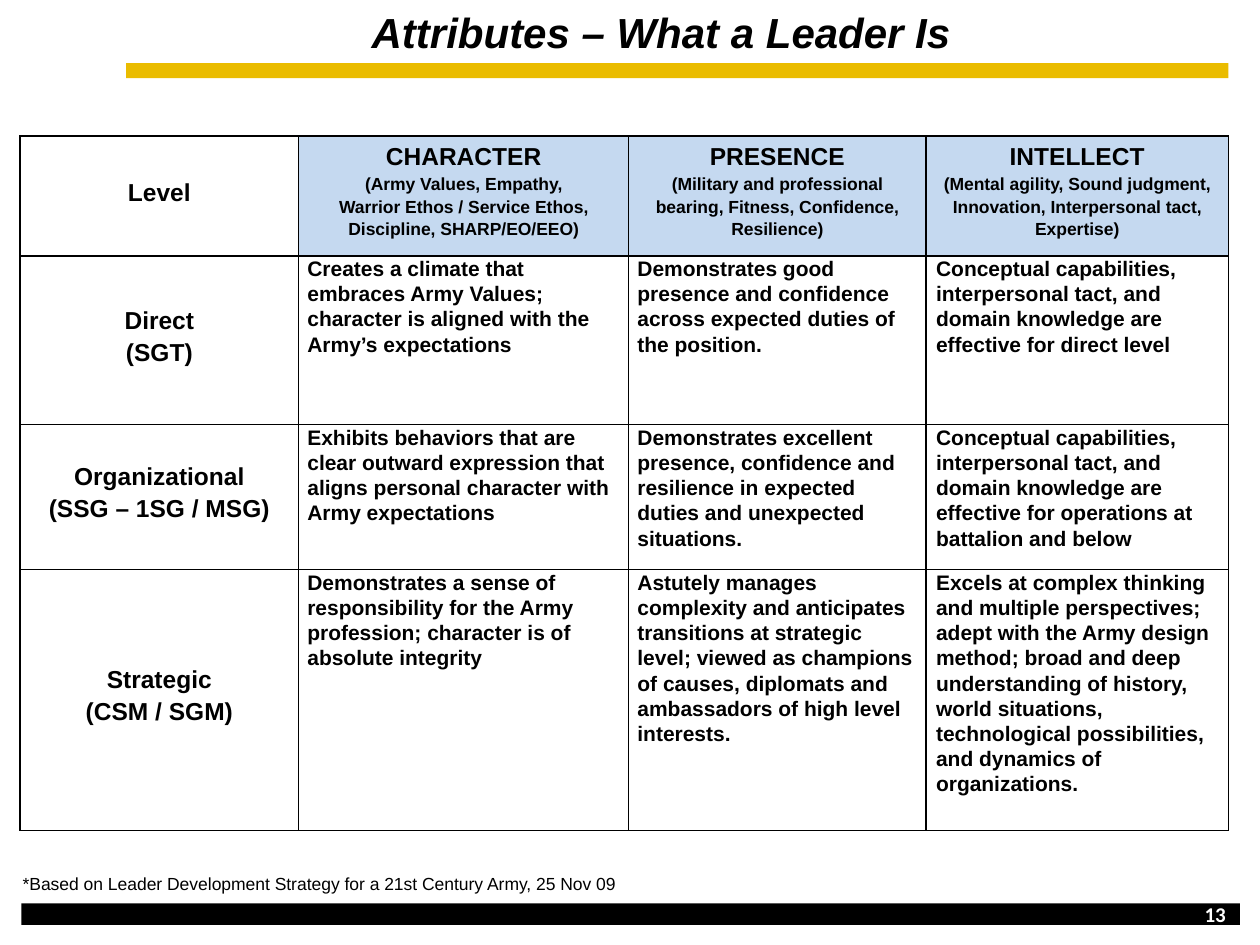
"""Build the leader attributes slide: title, level-by-attribute table and footer."""
from lxml.etree import SubElement
from pptx import Presentation
from pptx.dml.color import RGBColor as RGB
from pptx.enum.shapes import MSO_SHAPE as SHAPE
from pptx.enum.text import PP_ALIGN as ALIGN
from pptx.oxml.ns import qn
from pptx.util import Inches, Pt

COLORS = {"gold": "EABC00", "black": "000000", "white": "FFFFFF", "header": "C5D9F0"}


def add_lines(tf, lines, color="black", spacing=None, **font):
    tf.word_wrap = True
    for i, (text, size, before) in enumerate(lines):
        p = tf.paragraphs[0] if i == 0 else tf.add_paragraph()
        p.space_before = Pt(before)
        r = p.add_run()
        r.text = text
        for name, value in {"name": "Arial", "size": Pt(size), **font}.items():
            setattr(r.font, name, value)
        r.font.color.rgb = RGB.from_string(COLORS[color])
        if spacing:
            p.line_spacing = spacing


def set_margins(target, left=0, top=0, right=0, bottom=0):
    for side, value in zip(("left", "top", "right", "bottom"), (left, top, right, bottom)):
        setattr(target, f"margin_{side}", Inches(value))


prs = Presentation()
prs.slide_width, prs.slide_height = Inches(10), Inches(7.5)
s = prs.slides.add_slide(prs.slide_layouts[6])

bars = [("gold", 1, 0.5, 8.75, 0.12), ("black", 0.17, 7.17, 9.67, 0.17)]
for color, *box in bars:
    sp = s.shapes.add_shape(SHAPE.RECTANGLE, *map(Inches, box))
    sp.shadow.inherit = False
    sp.fill.solid()
    sp.fill.fore_color.rgb = RGB.from_string(COLORS[color])
    sp.line.fill.background()

widths = [2.21, 2.62, 2.36, 2.4]
heights = [0.95, 1.34, 1.15, 2.07]
headers = [
    ("CHARACTER", "(Army Values, Empathy, Warrior Ethos / Service Ethos, Discipline, SHARP/EO/EEO)", 0.3),
    ("PRESENCE", "(Military and professional bearing, Fitness, Confidence, Resilience)", 0.18),
    ("INTELLECT", "(Mental agility, Sound judgment, Innovation, Interpersonal tact, Expertise)", 0.1),
]
levels = [
    (["Level"], 0.34),
    (["Direct", "(SGT)"], 0.41),
    (["Organizational", "(SSG – 1SG / MSG)"], 0.31),
    (["Strategic", "(CSM / SGM)"], 0.77),
]
details = [
    [
        ["Creates a climate that embraces Army Values;",
         "character is aligned with the Army’s expectations"],
        ["Demonstrates good presence and confidence",
         "across expected duties of the position."],
        ["Conceptual capabilities, interpersonal tact, and",
         "domain knowledge are effective for direct level"],
    ],
    [
        ["Exhibits behaviors that are clear outward expression that "
         "aligns personal character with Army expectations"],
        ["Demonstrates excellent presence, confidence and "
         "resilience in expected duties and unexpected",
         "situations."],
        ["Conceptual capabilities, interpersonal tact, and "
         "domain knowledge are effective for operations at",
         "battalion and below"],
    ],
    [
        ["Demonstrates a sense of responsibility for the Army "
         "profession; character is of absolute integrity"],
        ["Astutely manages complexity and anticipates transitions at strategic "
         "level; viewed as champions of causes, diplomats and",
         "ambassadors of high level interests."],
        ["Excels at complex thinking and multiple perspectives; adept with the Army design "
         "method; broad and deep understanding of history,",
         "world situations, technological possibilities, and dynamics of organizations."],
    ],
]

table = s.shapes.add_table(4, 4, Inches(0.16), Inches(1.08),
                           Inches(sum(widths)), Inches(sum(heights))).table
table.first_row = table.horz_banding = False
for col, width in zip(table.columns, widths):
    col.width = Inches(width)
for row, height in zip(table.rows, heights):
    row.height = Inches(height)

for i in range(4):
    for j in range(4):
        cell = table.cell(i, j)
        tcPr = cell._tc.get_or_add_tcPr()
        for edge in ("a:lnL", "a:lnR", "a:lnT", "a:lnB"):
            ln = SubElement(tcPr, qn(edge), w=str(Pt(1)))
            fill = SubElement(ln, qn("a:solidFill"))
            SubElement(fill, qn("a:srgbClr"), val=COLORS["black"])
        tf = cell.text_frame
        if i == 0 and j > 0:
            heading, note, side = headers[j - 1]
            cell.fill.solid()
            cell.fill.fore_color.rgb = RGB.from_string(COLORS["header"])
            set_margins(cell, side, 0.06, side)
            add_lines(tf, [(heading, 14, 0), (note, 10, 0.6)], bold=True)
            tf.paragraphs[1].line_spacing = 1.15
        else:
            cell.fill.background()
            if j == 0:
                lines, top = levels[i]
                set_margins(cell, top=top)
                add_lines(tf, [(t, 14, 2.5 * k) for k, t in enumerate(lines)], bold=True)
            else:
                set_margins(cell, 0.08 if j == 3 else 0.07, 0, 0.1)
                add_lines(tf, [(t, 12, 0) for t in details[i - 1][j - 1]],
                          spacing=Pt(14.4), bold=True)
        for p in tf.paragraphs:
            p.alignment = ALIGN.CENTER if i == 0 or j == 0 else ALIGN.LEFT

captions = [
    ("Attributes – What a Leader Is", 24, (2.95, 0.05, 6.3, 0.47), {"bold": True, "italic": True}),
    ("*Based on Leader Development Strategy for a 21st Century Army, 25 Nov 09", 10,
     (0.18, 6.93, 5, 0.18), {}),
    ("13", 12, (9.56, 7.18, 0.25, 0.19),
     {"bold": True, "name": "Calibri", "color": "white", "spacing": Pt(12.4)}),
]
for text, size, box, style in captions:
    tf = s.shapes.add_textbox(*map(Inches, box)).text_frame
    set_margins(tf)
    add_lines(tf, [(text, size, 0)], **style)

prs.save("out.pptx")
